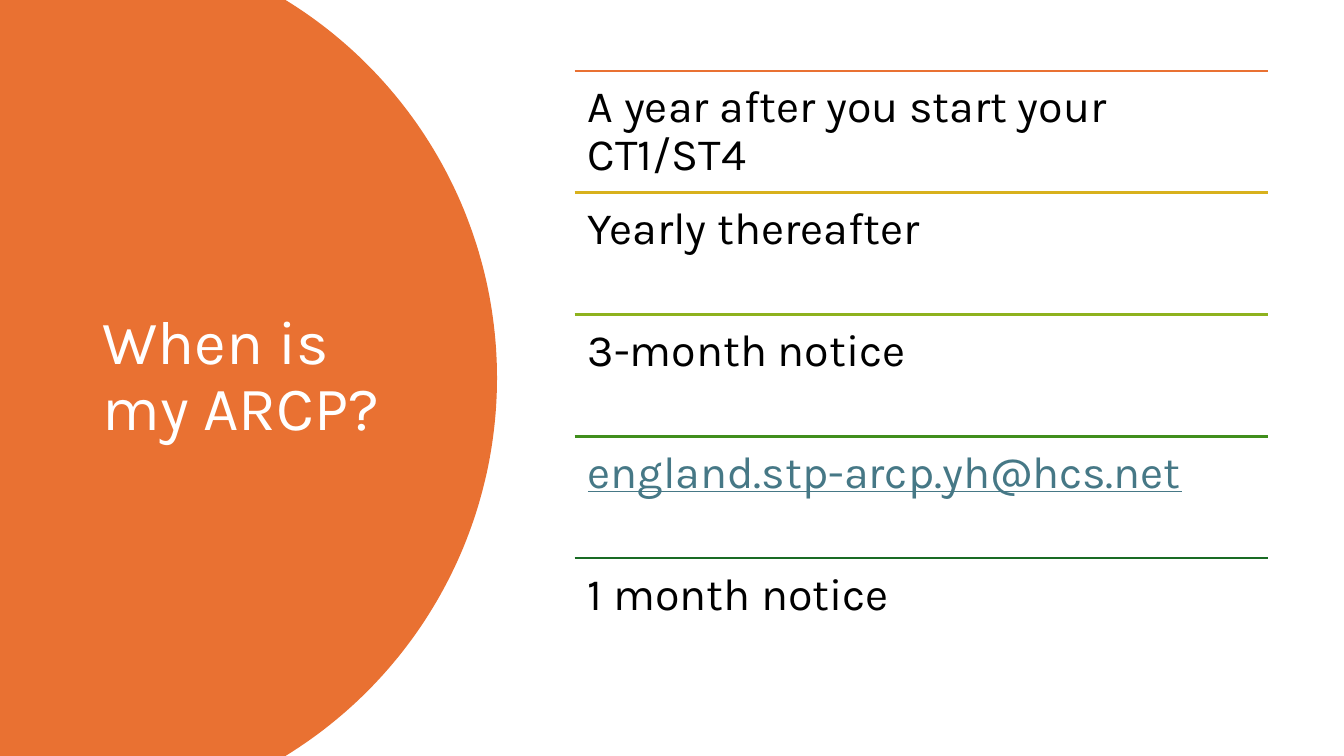
from math import asin, cos, sin

from lxml.etree import SubElement
from pptx import Presentation
from pptx.dml.color import RGBColor
from pptx.enum.shapes import MSO_CONNECTOR
from pptx.enum.text import MSO_ANCHOR
from pptx.oxml.ns import qn
from pptx.util import Inches, Pt

WHITE = RGBColor(0xFF, 0xFF, 0xFF)
BLACK = RGBColor(0x00, 0x00, 0x00)
ORANGE = RGBColor(0xE9, 0x71, 0x32)
GOLD = RGBColor(0xD8, 0xB1, 0x1D)
LIME = RGBColor(0x8E, 0xB2, 0x1E)
GREEN = RGBColor(0x40, 0x8E, 0x1C)
FOREST = RGBColor(0x19, 0x6B, 0x24)
LINK = RGBColor(0x46, 0x78, 0x86)

SLIDE_WIDTH, SLIDE_HEIGHT = 13.33, 7.5
ARC_CENTER, ARC_RADIUS, ARC_STEPS = 0.53, 4.4, 120
LIST_LEFT, LIST_TOP, LIST_WIDTH, ROW_HEIGHT = 5.7, 0.7, 6.88, 1.21

ROWS = [
    ("A year after you start your CT1/ST4", ORANGE, BLACK),
    ("Yearly thereafter", GOLD, BLACK),
    ("3-month notice", LIME, BLACK),
    ("england.stp-arcp.yh@hcs.net", GREEN, LINK),
    ("1 month notice", FOREST, BLACK),
]


class SlideBuilder:
    font_name = "Karla"
    line_spacing = 0.9
    rule_width = Pt(1.5)

    def __init__(self, slide):
        self.shapes = slide.shapes

    def round_panel(self, color):
        middle = SLIDE_HEIGHT / 2
        reach = asin(middle / ARC_RADIUS)
        angles = [reach * (2 * step / ARC_STEPS - 1) for step in range(ARC_STEPS + 1)]
        arc = [
            (Inches(ARC_CENTER + ARC_RADIUS * cos(angle)),
             Inches(middle + ARC_RADIUS * sin(angle)))
            for angle in angles
        ]
        outline = self.shapes.build_freeform(0, 0)
        outline.add_line_segments(arc + [(0, Inches(SLIDE_HEIGHT))], close=True)
        panel = outline.convert_to_shape()
        panel.shadow.inherit = False
        panel.fill.solid()
        panel.fill.fore_color.rgb = color
        panel.line.fill.background()

    def rule(self, left, top, width, color):
        line = self.shapes.add_connector(
            MSO_CONNECTOR.STRAIGHT,
            Inches(left), Inches(top), Inches(left + width), Inches(top),
        )
        line.line.color.rgb = color
        line.line.width = self.rule_width
        SubElement(line._element.spPr, qn("a:effectLst"))

    def text(self, wording, left, top, width, height, size, color,
             anchor=MSO_ANCHOR.TOP, inset=(0.1, 0.05), underline=False):
        box = self.shapes.add_textbox(
            Inches(left), Inches(top), Inches(width), Inches(height))
        frame = box.text_frame
        frame.word_wrap = True
        frame.vertical_anchor = anchor
        frame.margin_left = frame.margin_right = Inches(inset[0])
        frame.margin_top = frame.margin_bottom = Inches(inset[1])
        paragraph = frame.paragraphs[0]
        paragraph.line_spacing = self.line_spacing
        paragraph.text = wording
        font = paragraph.font
        font.name = self.font_name
        font.size = Pt(size)
        font.color.rgb = color
        if underline:
            font.underline = True


def main():
    presentation = Presentation()
    presentation.slide_width = Inches(SLIDE_WIDTH)
    presentation.slide_height = Inches(SLIDE_HEIGHT)
    builder = SlideBuilder(presentation.slides.add_slide(presentation.slide_layouts[6]))

    builder.round_panel(ORANGE)
    builder.text("When is my ARCP?", 0.92, 0.7, 3.23, 6.09, 44, WHITE,
                 anchor=MSO_ANCHOR.MIDDLE)

    for index, (wording, rule_color, text_color) in enumerate(ROWS):
        top = LIST_TOP + index * ROW_HEIGHT
        builder.rule(LIST_LEFT, top, LIST_WIDTH, rule_color)
        builder.text(wording, LIST_LEFT, top, LIST_WIDTH, ROW_HEIGHT, 32, text_color,
                     inset=(0.13, 0.13), underline=text_color == LINK)

    presentation.save("out.pptx")


if __name__ == "__main__":
    main()
